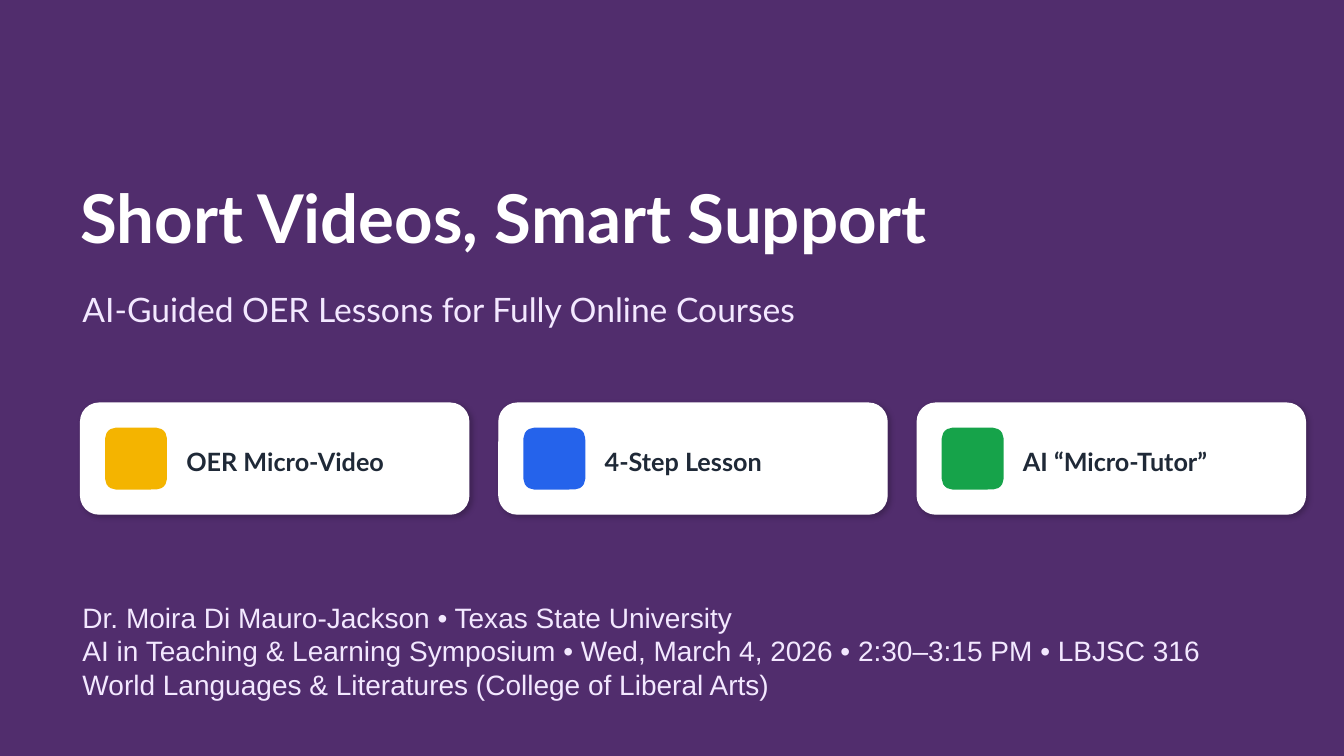
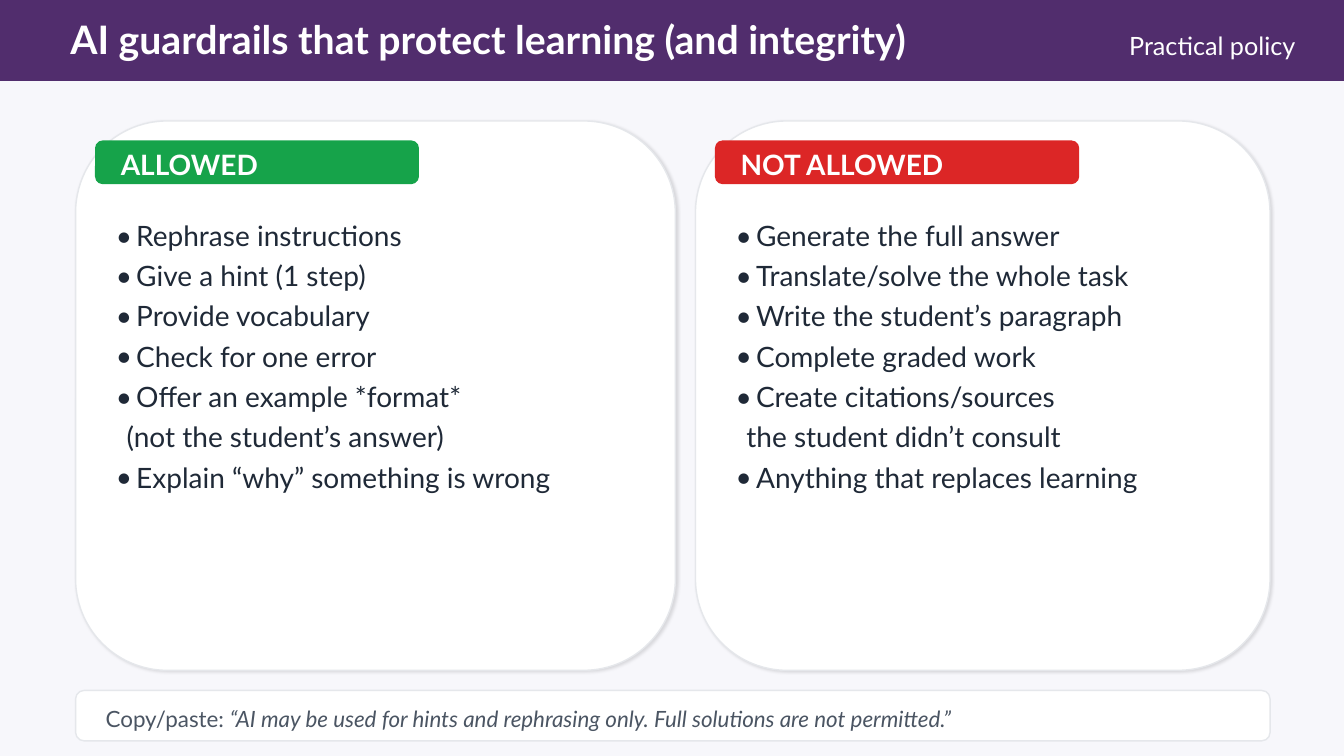
import pptx
import pptx.dml.color
import pptx.enum.shapes
import pptx.enum.text
import pptx.oxml.ns
import pptx.util
from lxml import etree

Pt = pptx.util.Pt
Shape = pptx.enum.shapes.MSO_SHAPE
Anchor = pptx.enum.text.MSO_ANCHOR
Align = pptx.enum.text.PP_ALIGN
qn = pptx.oxml.ns.qn

PURPLE, LAVENDER, PALE = "512D6D", "F3E8FF", "F7F7FB"
WHITE, INK, GRAY, BORDER = "FFFFFF", "1F2937", "4B5563", "E5E7EB"
AMBER, BLUE, GREEN, RED = "F4B400", "2563EB", "16A34A", "DC2626"
FONT = "Lato"

TITLE = "Short Videos, Smart Support"
SUBTITLE = "AI-Guided OER Lessons for Fully Online Courses"
TOPICS = [("OER Micro-Video", AMBER), ("4-Step Lesson", BLUE), ("AI “Micro-Tutor”", GREEN)]
DETAILS = [
    "Dr. Moira Di Mauro-Jackson • Texas State University",
    "AI in Teaching & Learning Symposium • Wed, March 4, 2026 • 2:30–3:15 PM • LBJSC 316",
    "World Languages & Literatures (College of Liberal Arts)",
]

POLICY_TITLE = "AI guardrails that protect learning (and integrity)"
POLICY_TAG = "Practical policy"
# Each rule is a tuple: the bulleted line, then any continuation lines.
PANELS = [
    {"heading": "ALLOWED", "color": GREEN, "width": 428.4, "badge_width": 230.4, "rules": [
        ("Rephrase instructions",),
        ("Give a hint (1 step)",),
        ("Provide vocabulary",),
        ("Check for one error",),
        ("Offer an example *format*", "(not the student’s answer)"),
        ("Explain “why” something is wrong",),
    ]},
    {"heading": "NOT ALLOWED", "color": RED, "width": 410.4, "badge_width": 259.2, "rules": [
        ("Generate the full answer",),
        ("Translate/solve the whole task",),
        ("Write the student’s paragraph",),
        ("Complete graded work",),
        ("Create citations/sources", "the student didn’t consult"),
        ("Anything that replaces learning",),
    ]},
]
STATEMENT_LABEL = "Copy/paste: "
STATEMENT = "“AI may be used for hints and rephrasing only. Full solutions are not permitted.”"


def rgb(value):
    return pptx.dml.color.RGBColor.from_string(value)


def add_slide(presentation, background):
    slide = presentation.slides.add_slide(presentation.slide_layouts[6])
    slide.background.fill.solid()
    slide.background.fill.fore_color.rgb = rgb(background)
    return slide


def add_box(slide, box, fill, line=None, kind=Shape.ROUNDED_RECTANGLE, shadow=None):
    """Draw a filled shape; shadow is (opacity percent, blur, distance)."""
    shape = slide.shapes.add_shape(kind, *map(Pt, box))
    shape.fill.solid()
    shape.fill.fore_color.rgb = rgb(fill)
    shape.line.color.rgb = rgb(line or fill)
    shape.line.width = Pt(1)
    shape.shadow.inherit = False
    if shadow:
        opacity, blur, distance = shadow
        effects = shape._element.spPr.find(qn("a:effectLst"))
        outer = etree.SubElement(effects, qn("a:outerShdw"), blurRad=str(Pt(blur)),
                                 dist=str(Pt(distance)), dir="2700000",
                                 algn="bl", rotWithShape="0")
        color = etree.SubElement(outer, qn("a:srgbClr"), val="000000")
        etree.SubElement(color, qn("a:alpha"), val=str(opacity * 1000))


def add_frame(slide, box, anchor=Anchor.MIDDLE):
    frame = slide.shapes.add_textbox(*map(Pt, box)).text_frame
    frame.word_wrap = True
    frame.vertical_anchor = anchor
    return frame


def add_run(paragraph, text, size, color, bold=False, italic=False, font=FONT):
    run = paragraph.add_run()
    run.text = text
    run.font.name = font
    run.font.size = Pt(size)
    run.font.bold = bold
    run.font.italic = italic
    run.font.color.rgb = rgb(color)


def add_text(slide, box, lines, size, color, bold=False, align=Align.LEFT, font=FONT):
    frame = add_frame(slide, box)
    for index, line in enumerate(lines):
        paragraph = frame.add_paragraph() if index else frame.paragraphs[0]
        paragraph.alignment = align
        add_run(paragraph, line, size, color, bold, font=font)


def add_rules(slide, box, rules):
    frame = add_frame(slide, box, Anchor.TOP)
    lines = [(line, position == 0) for rule in rules for position, line in enumerate(rule)]
    for index, (line, bulleted) in enumerate(lines):
        paragraph = frame.add_paragraph() if index else frame.paragraphs[0]
        paragraph.line_spacing = 1.2
        properties = paragraph._p.get_or_add_pPr()
        indent = Pt(14.6) if bulleted else Pt(7.7)
        properties.set("marL", str(indent))
        properties.set("indent", str(-indent if bulleted else 0))
        if bulleted:
            etree.SubElement(properties, qn("a:buFont"), typeface=FONT)
            etree.SubElement(properties, qn("a:buChar"), char="•")
        else:
            etree.SubElement(properties, qn("a:buNone"))
        add_run(paragraph, line, 20, INK)


def build_cover(presentation):
    slide = add_slide(presentation, PURPLE)
    add_text(slide, (50.4, 122.4, 864, 64.8), [TITLE], 48, WHITE, bold=True)
    add_text(slide, (51.84, 190.8, 864, 60.48), [SUBTITLE], 24, LAVENDER)
    card_width, gap, top = 277.2, 21.6, 288
    for index, (topic, color) in enumerate(TOPICS):
        left = 57.6 + index * (card_width + gap)
        add_box(slide, (left, top, card_width, 79.2), WHITE, shadow=(22, 4, 2))
        add_box(slide, (left + 18, top + 18, 43.2, 43.2), color)
        add_text(slide, (left + 68.4, top + 20.16, 198, 43.2), [topic], 18, INK, bold=True)
    add_text(slide, (51.84, 403.92, 864, 121.68), DETAILS, 20, LAVENDER, font="Arial")


def build_policy(presentation):
    slide = add_slide(presentation, PALE)
    add_box(slide, (0, 0, 960, 57.6), PURPLE, kind=Shape.RECTANGLE)
    add_text(slide, (43.2, 10.08, 666, 36), [POLICY_TITLE], 28, WHITE, bold=True)
    add_text(slide, (716.4, 14.4, 216, 36), [POLICY_TAG], 18, WHITE, align=Align.RIGHT)

    margin, gap, top = 54, 14.4, 86.4
    left = margin
    for panel in PANELS:
        width, badge_width = panel["width"], panel["badge_width"]
        add_box(slide, (left, top, width, 392.4), WHITE, BORDER, shadow=(12, 2, 1.2))
        add_box(slide, (left + 14.4, top + 14.4, badge_width, 30.24), panel["color"])
        add_text(slide, (left + 25.2, top + 20.16, badge_width - 21.6, 21.6),
                 [panel["heading"]], 20, WHITE, bold=True)
        add_rules(slide, (left + 21.6, top + 61.2, width - 36, 313.2), panel["rules"])
        left += width + gap

    full_width = left - gap - margin
    add_box(slide, (margin, 493.2, full_width, 36), WHITE, BORDER)
    frame = add_frame(slide, (margin + 14.4, 500.4, full_width - 28.8, 25.2))
    add_run(frame.paragraphs[0], STATEMENT_LABEL, 16, GRAY)
    add_run(frame.paragraphs[0], STATEMENT, 16, GRAY, italic=True)


def main():
    presentation = pptx.Presentation()
    presentation.slide_width = Pt(960)
    presentation.slide_height = Pt(540)
    build_cover(presentation)
    build_policy(presentation)
    presentation.save("out.pptx")


if __name__ == "__main__":
    main()
